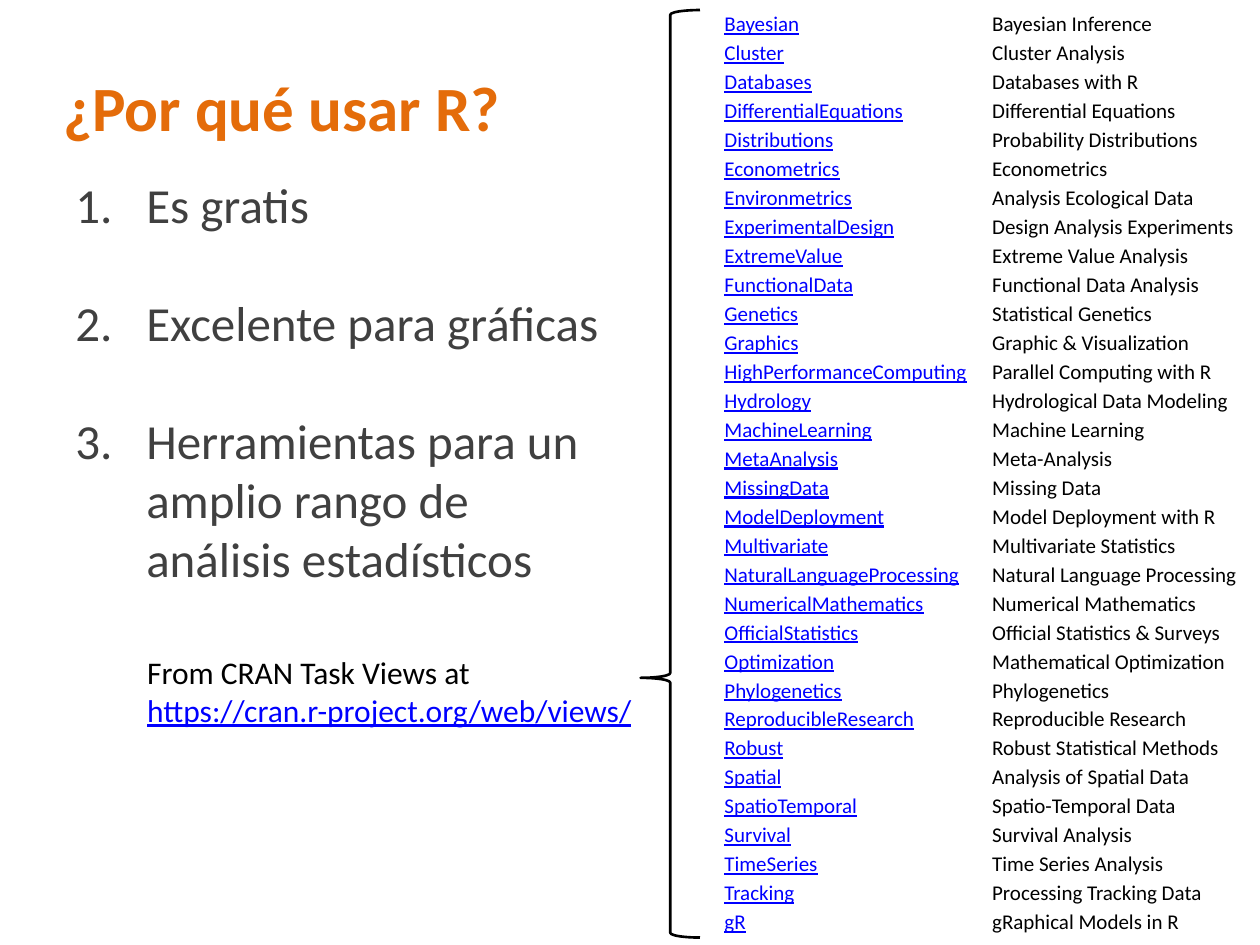
from pptx import Presentation
from pptx import util as u
from pptx.dml.color import RGBColor
from pptx.enum import shapes, text
from lxml import etree

BLACK = RGBColor(0, 0, 0)
BLUE = RGBColor(0, 0, 255)
GRAY = RGBColor(0x40, 0x40, 0x40)
ORANGE = RGBColor(0xE4, 0x6C, 0x0A)

VIEWS = [
    ("Bayesian", "Bayesian Inference"),
    ("Cluster", "Cluster Analysis"),
    ("Databases", "Databases with R"),
    ("DifferentialEquations", "Differential Equations"),
    ("Distributions", "Probability Distributions"),
    ("Econometrics", "Econometrics"),
    ("Environmetrics", "Analysis Ecological Data"),
    ("ExperimentalDesign", "Design Analysis Experiments"),
    ("ExtremeValue", "Extreme Value Analysis"),
    ("FunctionalData", "Functional Data Analysis"),
    ("Genetics", "Statistical Genetics"),
    ("Graphics", "Graphic & Visualization"),
    ("HighPerformanceComputing", "Parallel Computing with R"),
    ("Hydrology", "Hydrological Data Modeling"),
    ("MachineLearning", "Machine Learning"),
    ("MetaAnalysis", "Meta-Analysis"),
    ("MissingData", "Missing Data"),
    ("ModelDeployment", "Model Deployment with R"),
    ("Multivariate", "Multivariate Statistics"),
    ("NaturalLanguageProcessing", "Natural Language Processing"),
    ("NumericalMathematics", "Numerical Mathematics"),
    ("OfficialStatistics", "Official Statistics & Surveys"),
    ("Optimization", "Mathematical Optimization"),
    ("Phylogenetics", "Phylogenetics"),
    ("ReproducibleResearch", "Reproducible Research"),
    ("Robust", "Robust Statistical Methods"),
    ("Spatial", "Analysis of Spatial Data"),
    ("SpatioTemporal", "Spatio-Temporal Data"),
    ("Survival", "Survival Analysis"),
    ("TimeSeries", "Time Series Analysis"),
    ("Tracking", "Processing Tracking Data"),
    ("gR", "gRaphical Models in R"),
]
REASONS = [
    "Es gratis",
    "Excelente para gráficas",
    "Herramientas para un amplio rango de\nanálisis estadísticos",
]


def write(para, words, font="Calibri", size=12, color=BLACK, bold=False, under=False):
    for i, line in enumerate(words.split("\n")):
        if i:
            para.add_line_break()
        run = para.add_run()
        run.text = line
        run.font.name = font
        run.font.size = u.Pt(size)
        run.font.color.rgb = color
        run.font.bold = bold
        run.font.underline = under


class Page:
    def __init__(self, slide, font):
        self.slide = slide
        self.font = font

    def box(self, x, y, w, h, wrap=False):
        frame = self.slide.shapes.add_textbox(*map(u.Pt, (x, y, w, h))).text_frame
        frame.word_wrap = wrap
        return frame

    def label(self, x, y, w, h, *parts):
        para = self.box(x, y, w, h).paragraphs[0]
        for i, (words, style) in enumerate(parts):
            if i:
                para.add_line_break()
            write(para, words, font=self.font, **style)

    def list(self, x, y, w, h, items, indent, gap, **style):
        frame = self.box(x, y, w, h, wrap=True)
        for i, item in enumerate(items):
            para = frame.add_paragraph() if i else frame.paragraphs[0]
            para.space_before = u.Pt(gap if i else 0)
            props = para._p.get_or_add_pPr()
            props.set("marL", str(u.Pt(indent)))
            props.set("indent", str(-u.Pt(indent)))
            space = props.nsmap["a"]
            etree.SubElement(props, f"{{{space}}}buFont", typeface="+mj-lt")
            etree.SubElement(props, f"{{{space}}}buAutoNum", type="arabicPeriod")
            write(para, item, font=self.font, **style)

    def brace(self, x, y, w, h, curl, tip):
        shape = self.slide.shapes.add_shape(
            shapes.MSO_SHAPE.LEFT_BRACE, *map(u.Pt, (x, y, w, h)))
        shape.adjustments[0] = curl
        shape.adjustments[1] = tip
        shape.fill.background()
        shape.line.color.rgb = BLACK
        shape.line.width = u.Pt(1.5)
        shape.shadow.inherit = False

    def table(self, x, y, w, h, rows, styles):
        grid = self.slide.shapes.add_table(
            len(rows), len(styles), *map(u.Pt, (x, y, w, h))).table
        grid.first_row = False
        grid.horz_banding = False
        for r, row in enumerate(rows):
            grid.rows[r].height = u.Pt(h / len(rows))
            for c, words in enumerate(row):
                cell = grid.cell(r, c)
                cell.fill.background()
                cell.vertical_anchor = text.MSO_ANCHOR.MIDDLE
                cell.margin_left = cell.margin_right = u.Pt(2)
                cell.margin_top = cell.margin_bottom = u.Pt(0.75)
                write(cell.text_frame.paragraphs[0], words, font=self.font, **styles[c])


def main():
    deck = Presentation()
    deck.slide_width, deck.slide_height = u.Pt(720), u.Pt(540)
    page = Page(deck.slides.add_slide(deck.slide_layouts[6]), "Calibri")
    link = dict(color=BLUE, under=True)
    page.table(412, 5.75, 306, 530, VIEWS, [link, {}])
    page.label(77, 369.5, 295, 51,
               ("From CRAN Task Views at", dict(size=18)),
               ("https://cran.r-project.org/web/views/", dict(size=18, **link)))
    page.brace(366, 5.75, 34, 530, 0.08, 0.72)
    page.list(36, 96, 364, 245, REASONS, indent=40.5, gap=34, size=28, color=GRAY)
    page.label(29, 35.5, 266, 51,
               ("¿Por qué usar R?", dict(size=36, color=ORANGE, bold=True)))
    deck.save("out.pptx")


if __name__ == "__main__":
    main()
